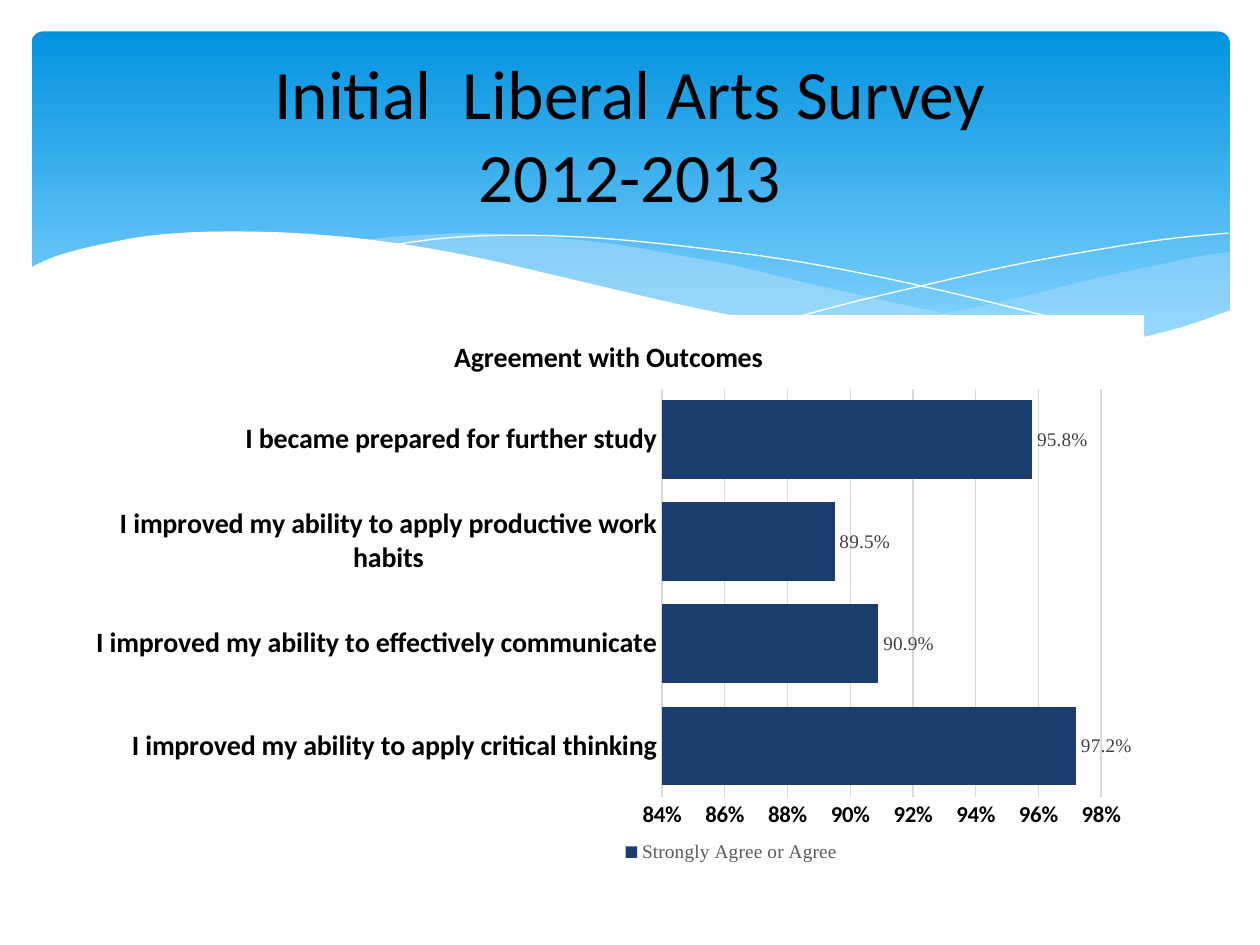
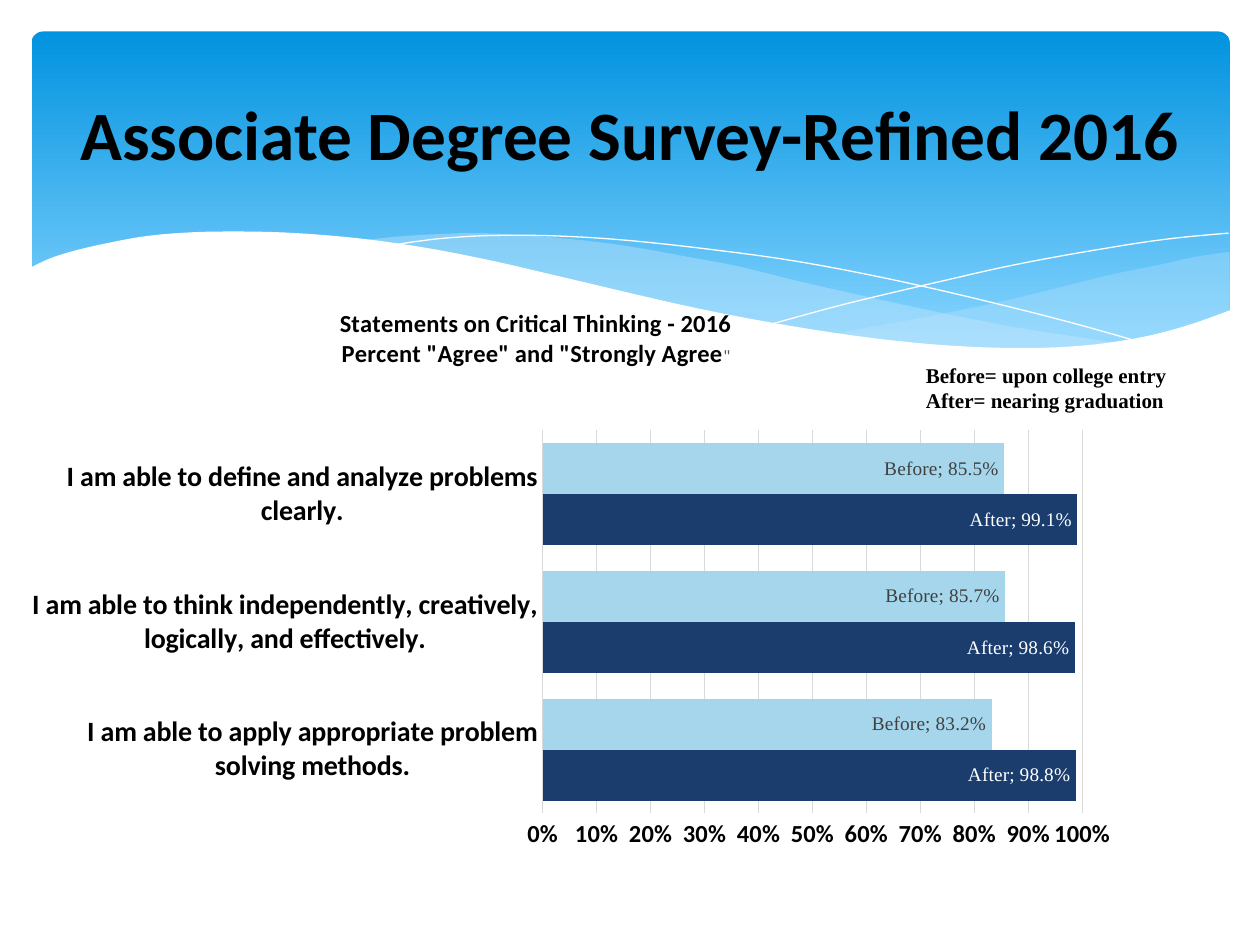
from dataclasses import dataclass

from lxml.etree import SubElement
from pptx import Presentation
from pptx.chart.data import CategoryChartData
from pptx.dml.color import RGBColor
from pptx.enum.chart import XL_CHART_TYPE, XL_LABEL_POSITION, XL_LEGEND_POSITION, XL_TICK_MARK
from pptx.enum.shapes import MSO_SHAPE
from pptx.enum.text import MSO_ANCHOR, MSO_AUTO_SIZE, PP_ALIGN
from pptx.oxml import parse_xml
from pptx.oxml.ns import nsdecls, qn
from pptx.util import Pt

PX = 9144


@dataclass(frozen=True)
class Theme:
    """Colours, fonts and type sizes shared by the slides."""
    sky_top: str = "0293E0"
    sky_bottom: str = "83D3FE"
    wave: str = "C6E7FC"
    white: str = "FFFFFF"
    black: str = "000000"
    navy: str = "1A3D6D"
    light_blue: str = "A5D6EC"
    grid: str = "D9D9D9"
    label: str = "404040"
    muted: str = "595959"
    sans: str = "Calibri"
    serif: str = "Times New Roman"
    title_size: float = 39.6
    category_size: int = 16
    note_size: int = 12
    label_size: int = 11
    quote_size: int = 10


THEME = Theme()

RIGHT_WAVE_TOP = [(975, 200), (948, 204), (921, 210), (891, 216), (861, 223), (805, 237),
                  (753, 248), (706, 257), (661, 265)]
RIGHT_WAVE_BOTTOM = [(661, 265), (705, 271), (745, 275), (781, 277), (814, 278), (844, 277),
                     (872, 274), (897, 270), (921, 265), (942, 259), (963, 252), (976, 247)]
MIDDLE_WAVE_TOP = [(893, 273), (866, 269), (807, 260), (741, 247), (668, 231), (629, 222),
                   (584, 211), (541, 203), (502, 196), (465, 191), (420, 187), (380, 185),
                   (344, 186), (313, 188), (286, 191)]
MIDDLE_WAVE_BOTTOM = [(286, 191), (323, 196), (362, 203), (404, 211), (449, 222), (530, 240),
                      (601, 255), (665, 266), (722, 274), (773, 277), (818, 278), (857, 277),
                      (893, 273)]
FALLING_LINE = [(309, 195), (328, 192), (353, 189), (387, 187), (433, 187), (489, 190),
                (556, 197), (636, 208), (727, 226), (831, 251), (907, 272)]
RISING_LINE = [(613, 257), (672, 241), (748, 223), (806, 210), (866, 199), (924, 190), (975, 185)]
PAGE_EDGE = [(977, 246), (940, 259), (899, 269), (850, 275), (793, 276), (726, 272), (648, 262),
             (555, 245), (447, 220), (391, 207), (340, 197), (292, 190), (250, 186), (211, 184),
             (161, 184), (119, 187), (85, 193), (59, 199), (40, 205), (23, 213)]


def color(value):
    """Turn a hex string into a colour."""
    return RGBColor.from_string(value)


def smooth(points, steps=5):
    """Return points along a Catmull-Rom curve through the given points."""
    padded = [points[0], *points, points[-1]]
    curve = [points[0]]
    for a, b, c, d in zip(padded, padded[1:], padded[2:], padded[3:]):
        for step in range(1, steps + 1):
            t = step / steps
            curve.append(tuple(
                (2 * q + (r - p) * t + (2 * p - 5 * q + 4 * r - s) * t ** 2
                 + (3 * q - p - 3 * r + s) * t ** 3) / 2
                for p, q, r, s in zip(a, b, c, d)))
    return curve


def format_font(font, size, name=THEME.sans, ink=THEME.black, bold=False):
    """Apply size, typeface, colour and weight to a font."""
    font.size, font.name, font.bold = Pt(size), name, bold
    font.color.rgb = color(ink)


def write_text(paragraph, text, align=None, **style):
    """Fill a paragraph with text in one format."""
    paragraph.text = text
    paragraph.alignment = align
    for run in paragraph.runs:
        format_font(run.font, **style)


def arrange(chart, tag, after=None, inner=False, **fractions):
    """Give a chart part a fixed place in fractions of the chart."""
    element = chart.element.find(".//" + qn(tag))
    for layout in element.findall(qn("c:layout")):
        element.remove(layout)
    target = '<c:layoutTarget val="inner"/>' if inner else ""
    modes = "".join(f'<c:{key}Mode val="edge"/>' for key in fractions if key in "xy")
    values = "".join(f'<c:{key} val="{value}"/>' for key, value in fractions.items())
    layout = parse_xml(f'<c:layout {nsdecls("c")}><c:manualLayout>{target}{modes}{values}'
                       '</c:manualLayout></c:layout>')
    if after:
        element.find(qn(after)).addnext(layout)
    else:
        element.insert(0, layout)


class Deck:
    """Holds the presentation, its style and the current slide."""

    def __init__(self, theme):
        self.theme = theme
        self.presentation = Presentation()
        self.presentation.slide_width, self.presentation.slide_height = 1000 * PX, 750 * PX
        self.layout = self.presentation.slide_layouts[5]
        self.slide = None

    def add_slide(self, title, bold=False):
        """Start a slide with a centred title."""
        self.slide = self.presentation.slides.add_slide(self.layout)
        shape = self.slide.shapes.title
        shape.left, shape.top, shape.width, shape.height = (n * PX for n in (50, 37, 900, 137))
        frame = shape.text_frame
        frame.auto_size, frame.vertical_anchor = MSO_AUTO_SIZE.NONE, MSO_ANCHOR.MIDDLE
        write_text(frame.paragraphs[0], title, PP_ALIGN.CENTER,
                   size=self.theme.title_size, bold=bold)

    def add_band(self):
        """Draw the rounded gradient band."""
        shape = self.slide.shapes.add_shape(
            MSO_SHAPE.ROUNDED_RECTANGLE, *(n * PX for n in (25, 25, 951, 270)))
        shape.adjustments[0] = 0.034
        shape.shadow.inherit = False
        shape.line.fill.background()
        shape.fill.gradient()
        shape.fill.gradient_angle = 270
        stops = zip(shape.fill.gradient_stops, (0, 0.9),
                    (self.theme.sky_top, self.theme.sky_bottom))
        for stop, position, ink in stops:
            stop.position = position
            stop.color.rgb = color(ink)
        return shape

    def add_outline(self, points, fill=None, opacity=100):
        """Draw a filled area, or a white hairline when there is no fill."""
        points = [(round(x * PX), round(y * PX)) for x, y in points]
        builder = self.slide.shapes.build_freeform(*points[0])
        builder.add_line_segments(points[1:], close=bool(fill))
        shape = builder.convert_to_shape()
        shape.shadow.inherit = False
        if fill:
            shape.fill.solid()
            shape.fill.fore_color.rgb = color(fill)
            shape.line.fill.background()
            SubElement(shape.element.find(".//" + qn("a:srgbClr")),
                       qn("a:alpha"), val=str(opacity * 1000))
        else:
            shape.fill.background()
            shape.line.color.rgb = color(self.theme.white)
            shape.line.width = 0
        return shape

    def add_backdrop(self):
        """Draw the band and waves and hand them to the shared layout."""
        wave = self.theme.wave
        shapes = [
            self.add_band(),
            self.add_outline(smooth(RIGHT_WAVE_TOP) + smooth(RIGHT_WAVE_BOTTOM) + [(976, 200)],
                             wave, 29),
            self.add_outline(smooth(MIDDLE_WAVE_TOP) + smooth(MIDDLE_WAVE_BOTTOM), wave, 40),
            self.add_outline(smooth(FALLING_LINE)),
            self.add_outline(smooth(RISING_LINE)),
            self.add_outline(smooth(PAGE_EDGE) + [(23, 329), (977, 329)], self.theme.white),
        ]
        for index, shape in enumerate(shapes):
            shape.element.nvSpPr.cNvPr.id = 100 + index
            self.layout.shapes.element.insert(2 + index, shape.element)

    def add_note(self, box, lines):
        """Add a bold serif text box with one paragraph per line."""
        frame = self.slide.shapes.add_textbox(*(n * PX for n in box)).text_frame
        frame.word_wrap, frame.auto_size = True, MSO_AUTO_SIZE.SHAPE_TO_FIT_TEXT
        for index, line in enumerate(lines):
            paragraph = frame.add_paragraph() if index else frame.paragraphs[0]
            write_text(paragraph, line, size=self.theme.note_size,
                       name=self.theme.serif, bold=True)

    def add_bar_chart(self, box, categories, series, title, title_size, axis, axis_size,
                      gap, plot, label_position, name_labels=False, fill=None):
        """Add a horizontal bar chart; series holds (name, values, fill, label ink)."""
        theme = self.theme
        data = CategoryChartData(number_format="0.0%")
        data.categories = categories
        for name, values, *_ in series:
            data.add_series(name, values)
        chart = self.slide.shapes.add_chart(
            XL_CHART_TYPE.BAR_CLUSTERED, *(n * PX for n in box), data).chart
        format_font(chart.font, 10)
        paint = f'<a:solidFill><a:srgbClr val="{fill}"/></a:solidFill>' if fill else "<a:noFill/>"
        chart.element.find(qn("c:chart")).addnext(parse_xml(
            f'<c:spPr {nsdecls("c", "a")}>{paint}<a:ln><a:noFill/></a:ln></c:spPr>'))
        chart.has_legend = False

        frame = chart.chart_title.text_frame
        for index, line in enumerate(title):
            paragraph = frame.add_paragraph() if index else frame.paragraphs[0]
            write_text(paragraph, line, size=title_size, bold=True)

        bars = chart.plots[0]
        bars.gap_width, bars.overlap, bars.vary_by_categories = gap, 0, False
        for item, (_, _, bar_color, ink) in zip(bars.series, series):
            item.format.fill.solid()
            item.format.fill.fore_color.rgb = color(bar_color)
            item.invert_if_negative = False
            labels = item.data_labels
            labels.show_value, labels.show_series_name = True, name_labels
            labels.number_format, labels.number_format_is_linked = "0.0%", False
            labels.position = label_position
            format_font(labels.font, theme.label_size, theme.serif, ink)

        category_axis, value_axis = chart.category_axis, chart.value_axis
        for each, size in ((category_axis, theme.category_size), (value_axis, axis_size)):
            each.major_tick_mark = each.minor_tick_mark = XL_TICK_MARK.NONE
            format_font(each.tick_labels.font, size, bold=True)
        value_axis.minimum_scale, value_axis.maximum_scale, value_axis.major_unit = axis
        value_axis.tick_labels.number_format = "0%"
        value_axis.tick_labels.number_format_is_linked = False
        value_axis.format.line.fill.background()
        for line in (category_axis.format.line, value_axis.major_gridlines.format.line):
            line.color.rgb = color(theme.grid)
            line.width = Pt(0.75)
        arrange(chart, "c:plotArea", inner=True, **dict(zip("xywh", plot)))
        return chart

    def add_legend(self, chart, x, y):
        """Show a legend at a fixed place below the bars."""
        chart.has_legend = True
        chart.legend.position = XL_LEGEND_POSITION.BOTTOM
        chart.legend.include_in_layout = False
        format_font(chart.legend.font, self.theme.label_size, self.theme.serif, self.theme.muted)
        arrange(chart, "c:legend", "c:legendPos", x=x, y=y)


def add_liberal_arts_slide(deck):
    """Build the 2012-2013 survey slide."""
    deck.add_slide("Initial  Liberal Arts Survey\v2012-2013")
    deck.add_backdrop()
    chart = deck.add_bar_chart(
        (58, 250, 850, 450),
        ["I improved my ability to apply critical thinking",
         "I improved my ability to effectively communicate",
         "I improved my ability to apply productive work habits",
         "I became prepared for further study"],
        [("Strongly Agree or Agree", (0.972, 0.909, 0.895, 0.958), THEME.navy, THEME.label)],
        ["Agreement with Outcomes"], 16, (0.84, 0.98, 0.02), 13, 30,
        (0.55, 0.13, 0.41, 0.72), XL_LABEL_POSITION.OUTSIDE_END, fill=THEME.white)
    deck.add_legend(chart, 0.51, 0.92)


def add_associate_degree_slide(deck):
    """Build the 2016 survey slide."""
    deck.add_slide("Associate Degree Survey-Refined 2016", bold=True)
    chart = deck.add_bar_chart(
        (8, 225, 892, 492),
        ["I am able to apply appropriate problem solving methods.",
         "I am able to think independently, creatively, logically, and effectively.",
         "I am able to define and analyze problems clearly."],
        [("After", (0.988, 0.986, 0.991), THEME.navy, THEME.white),
         ("Before", (0.832, 0.857, 0.855), THEME.light_blue, THEME.label)],
        ["Statements on Critical Thinking - 2016", 'Percent "Agree" and "Strongly Agree'],
        14, (0, 1, 0.1), 14, 50, (0.474, 0.237, 0.48, 0.618),
        XL_LABEL_POSITION.INSIDE_END, name_labels=True)
    closing_quote = chart.chart_title.text_frame.paragraphs[-1].add_run()
    closing_quote.text = '"'
    format_font(closing_quote.font, THEME.quote_size, ink=THEME.muted)
    arrange(chart, "c:title", "c:tx", x=0.29, y=0.03)
    deck.add_note((725, 283, 275, 50), ["Before= upon college entry", "After= nearing graduation"])


def main():
    """Build and save the slides."""
    deck = Deck(THEME)
    add_liberal_arts_slide(deck)
    add_associate_degree_slide(deck)
    deck.presentation.save("out.pptx")


if __name__ == "__main__":
    main()
